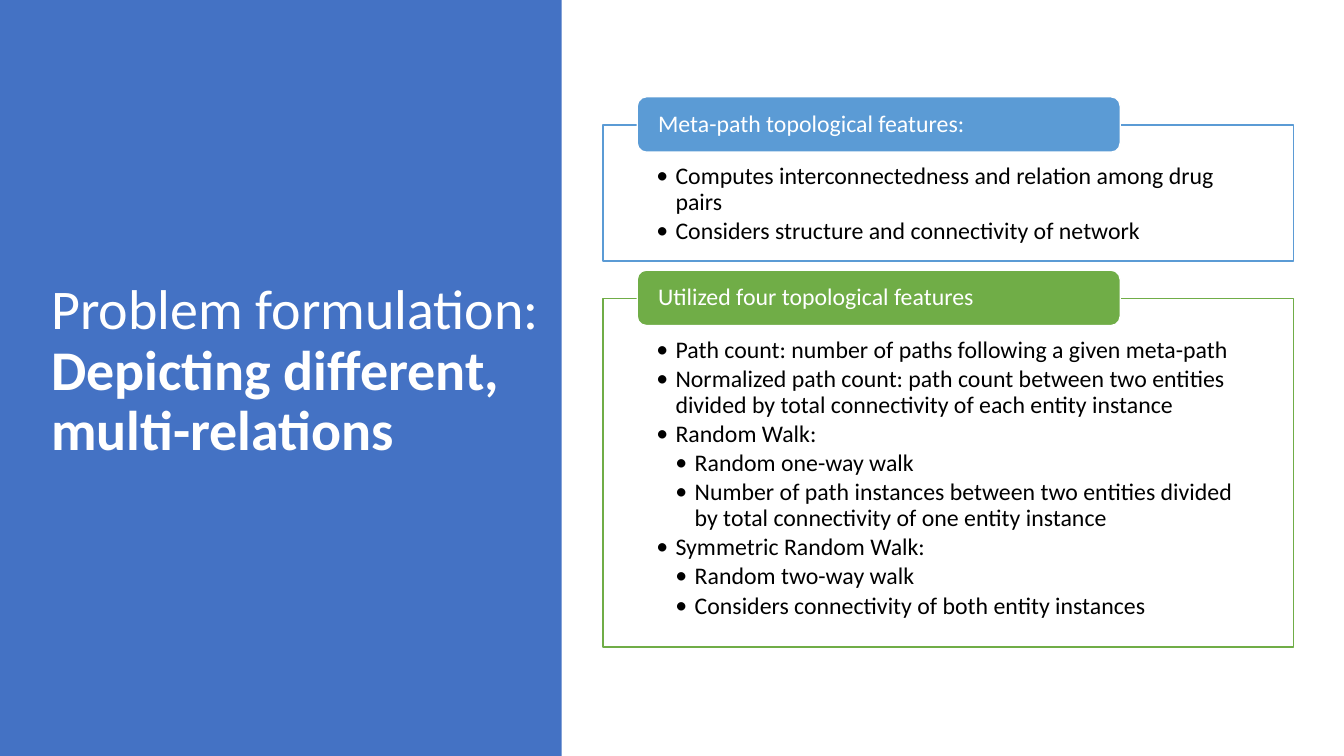
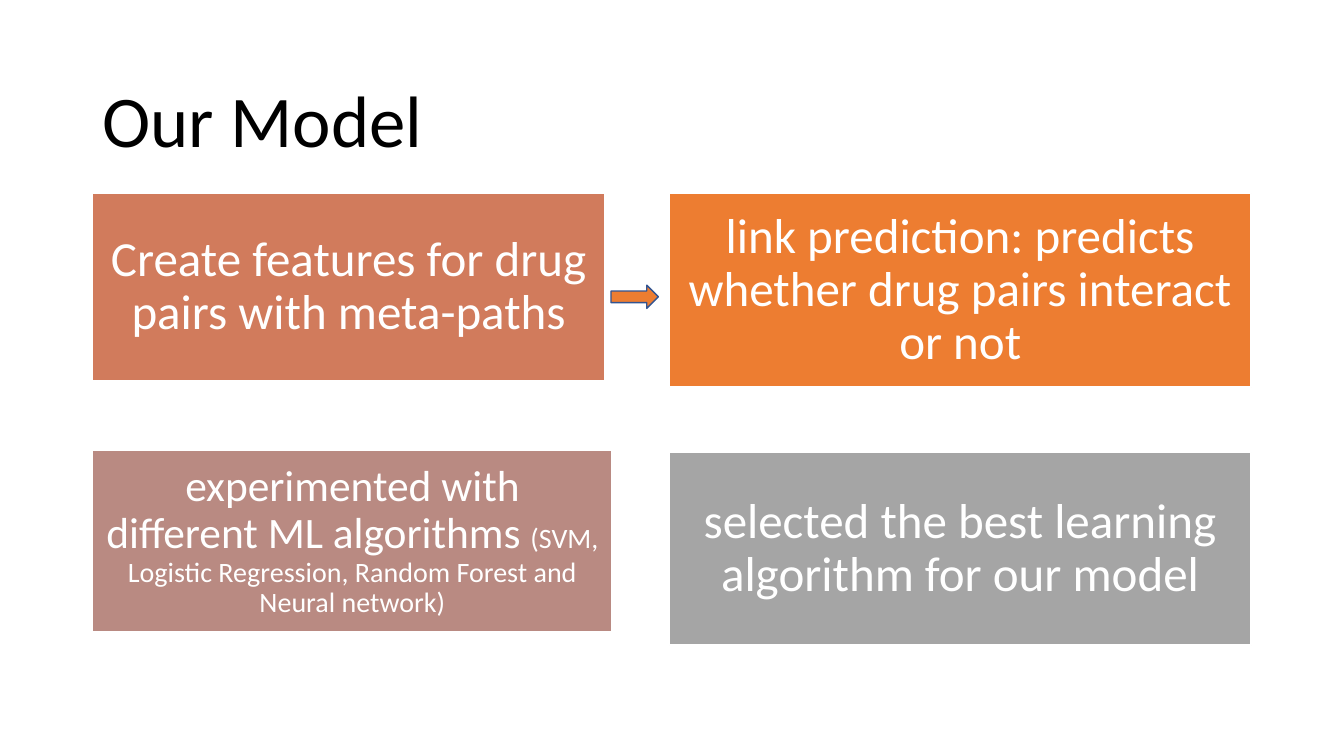
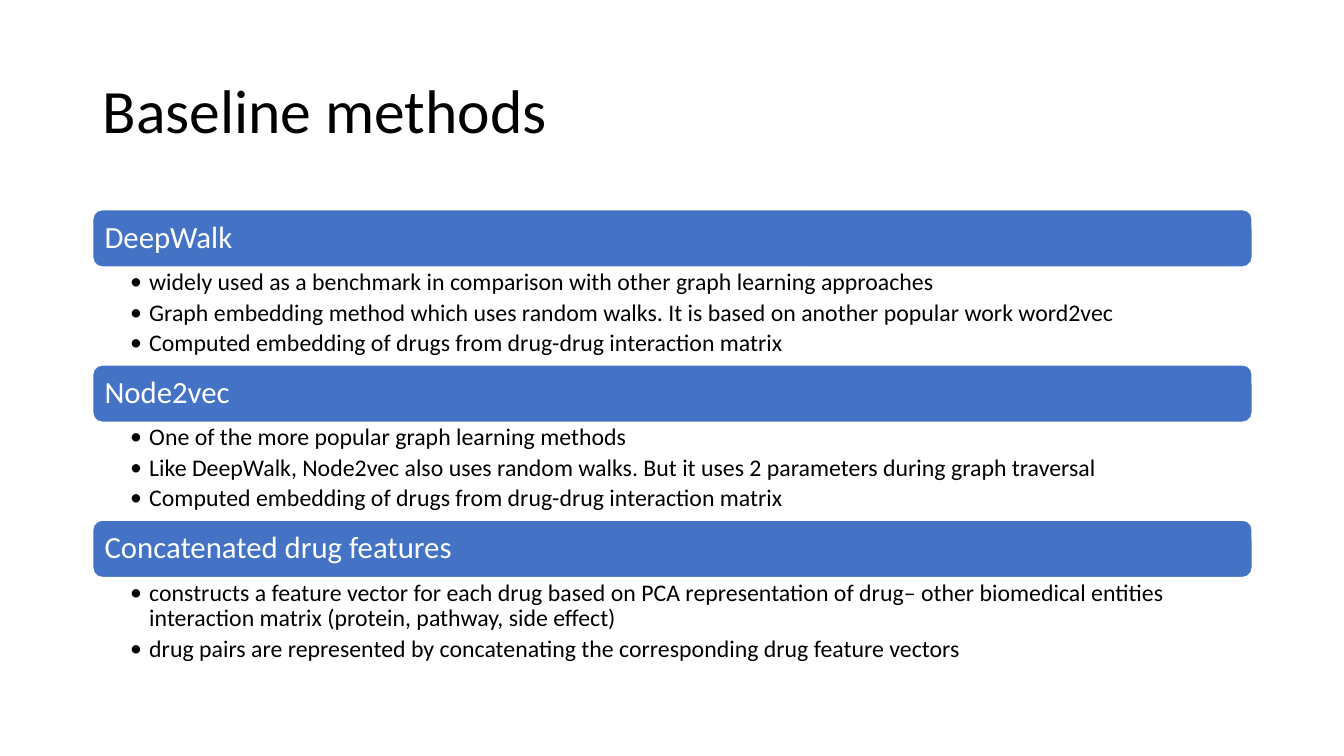
from dataclasses import dataclass

from lxml import etree
from pptx import Presentation
from pptx.dml.color import RGBColor
from pptx.enum.shapes import MSO_SHAPE
from pptx.enum.text import MSO_ANCHOR, PP_ALIGN
from pptx.oxml.ns import qn
from pptx.util import Inches, Pt

RECT, ROUNDED, ARROW = MSO_SHAPE.RECTANGLE, MSO_SHAPE.ROUNDED_RECTANGLE, MSO_SHAPE.RIGHT_ARROW
TOP, MIDDLE = MSO_ANCHOR.TOP, MSO_ANCHOR.MIDDLE
LEFT, CENTER = PP_ALIGN.LEFT, PP_ALIGN.CENTER

WHITE = RGBColor(0xFF, 0xFF, 0xFF)
BLACK = RGBColor(0x00, 0x00, 0x00)
BLUE = RGBColor(0x44, 0x72, 0xC4)
DARK_BLUE = RGBColor(0x32, 0x54, 0x91)
LIGHT_BLUE = RGBColor(0x5B, 0x9B, 0xD5)
GREEN = RGBColor(0x70, 0xAD, 0x47)
ORANGE = RGBColor(0xED, 0x7D, 0x31)
TERRACOTTA = RGBColor(0xD1, 0x7B, 0x5C)
ROSE = RGBColor(0xB9, 0x8A, 0x82)
GRAY = RGBColor(0xA5, 0xA5, 0xA5)

FONT = "Calibri"
BODY_SIZE = 17
BULLET_STEP = 0.19
TITLE_INSETS = (0.1, 0.05, 0.1, 0.05)
MARGIN, CONTENT_WIDTH = 0.92, 11.5


@dataclass(frozen=True)
class Box:
    left: float
    top: float
    width: float
    height: float

    def emu(self):
        return [Inches(v) for v in (self.left, self.top, self.width, self.height)]


@dataclass(frozen=True)
class Run:
    text: str
    size: float
    color: RGBColor = WHITE
    bold: bool = False


@dataclass(frozen=True)
class Bullet:
    text: str
    level: int = 1


@dataclass(frozen=True)
class Panel:
    heading: str
    color: RGBColor
    top: float
    height: float
    bullets: list[Bullet]


@dataclass(frozen=True)
class Step:
    box: Box
    color: RGBColor
    inset: float
    runs: list[Run]


@dataclass(frozen=True)
class Method:
    name: str
    body_height: float
    bullets: list[Bullet]


# Shared drawing helpers
def add_shape(slide, kind, box: Box, fill: RGBColor, line: RGBColor | None = None):
    sp = slide.shapes.add_shape(kind, *box.emu())
    sp.shadow.inherit = False
    sp.fill.solid()
    sp.fill.fore_color.rgb = fill
    if line is None:
        sp.line.fill.background()
    else:
        sp.line.color.rgb = line
        sp.line.width = Pt(1)
    return sp


def set_frame(sp, insets: tuple[float, ...], anchor):
    tf = sp.text_frame
    tf.word_wrap = True
    tf.vertical_anchor = anchor
    tf.margin_left, tf.margin_top, tf.margin_right, tf.margin_bottom = map(Inches, insets)
    return tf


def add_runs(p, runs: list[Run], align=LEFT) -> None:
    p.alignment = align
    p.line_spacing = 0.9
    for run in runs:
        r = p.add_run()
        r.text = run.text
        r.font.name = FONT
        r.font.size = Pt(run.size)
        r.font.bold = run.bold
        r.font.color.rgb = run.color


def write(sp, runs: list[Run], insets: tuple[float, ...], align=LEFT) -> None:
    add_runs(set_frame(sp, insets, MIDDLE).paragraphs[0], runs, align)


def write_bullets(sp, bullets: list[Bullet], insets: tuple[float, ...], gap: float) -> None:
    tf = set_frame(sp, insets, TOP)
    for i, bullet in enumerate(bullets):
        p = tf.add_paragraph() if i else tf.paragraphs[0]
        add_runs(p, [Run(bullet.text, BODY_SIZE, BLACK)])
        p.level = bullet.level
        p.space_after = Pt(gap)
        pPr = p._p.get_or_add_pPr()
        pPr.set("marL", str(Inches(BULLET_STEP * bullet.level)))
        pPr.set("indent", str(-Inches(BULLET_STEP)))
        etree.SubElement(pPr, qn("a:buFont")).set("typeface", FONT)
        etree.SubElement(pPr, qn("a:buChar")).set("char", "•")


def add_title(slide, box: Box, runs: list[Run]) -> None:
    write(slide.shapes.add_textbox(*box.emu()), runs, TITLE_INSETS)


# Slide 1: side title and two headed panels
PANELS = [
    Panel("Meta-path topological features:", LIGHT_BLUE, 1.24, 1.35, [
        Bullet("Computes interconnectedness and relation among drug pairs"),
        Bullet("Considers structure and connectivity of network"),
    ]),
    Panel("Utilized four topological features", GREEN, 2.96, 3.46, [
        Bullet("Path count: number of paths following a given meta-path"),
        Bullet("Normalized path count: path count between two entities divided by "
               "total connectivity of each entity instance"),
        Bullet("Random Walk:"),
        Bullet("Random one-way walk", 2),
        Bullet("Number of path instances between two entities divided by total "
               "connectivity of one entity instance", 2),
        Bullet("Symmetric Random Walk:"),
        Bullet("Random two-way walk", 2),
        Bullet("Considers connectivity of both entity instances", 2),
    ]),
]


def build_formulation(slide) -> None:
    add_shape(slide, RECT, Box(0, 0, 5.57, 7.5), BLUE)
    add_title(slide, Box(0.41, 0.68, 5.18, 6.02), [
        Run("Problem formulation: ", 40),
        Run("Depicting different, multi-relations", 40, bold=True),
    ])
    for panel in PANELS:
        frame = add_shape(slide, RECT, Box(5.98, panel.top, 6.85, panel.height),
                          WHITE, panel.color)
        write_bullets(frame, panel.bullets, (0.53, 0.39, 0.53, 0.13), 2.5)
        tab = add_shape(slide, ROUNDED, Box(6.32, panel.top - 0.28, 4.79, 0.55),
                        panel.color, WHITE)
        write(tab, [Run(panel.heading, BODY_SIZE)], (0.18, 0, 0.18, 0))


# Slide 2: four steps of the model
RIGHT_COLUMN, RIGHT_WIDTH = 6.64, 5.77
STEPS = [
    Step(Box(RIGHT_COLUMN, 1.92, RIGHT_WIDTH, 1.92), ORANGE, 0.15,
         [Run("link prediction: predicts whether drug pairs interact or not", 35)]),
    Step(Box(MARGIN, 1.92, 5.08, 1.86), TERRACOTTA, 0.15,
         [Run("Create features for drug pairs with meta-paths", 35)]),
    Step(Box(MARGIN, 4.47, 5.15, 1.8), ROSE, 0.13,
         [Run("experimented with different ML algorithms ", 31),
          Run("(SVM, Logistic Regression, Random Forest and Neural network)", 20)]),
    Step(Box(RIGHT_COLUMN, 4.49, RIGHT_WIDTH, 1.91), GRAY, 0.15,
         [Run("selected the best learning algorithm for our model", 35)]),
]


def build_model(slide) -> None:
    add_title(slide, Box(MARGIN, 0.61, CONTENT_WIDTH, 1.24), [Run("Our Model", 52, BLACK)])
    for step in STEPS:
        sp = add_shape(slide, RECT, step.box, step.color, WHITE)
        write(sp, step.runs, (step.inset,) * 4, CENTER)
    add_shape(slide, ARROW, Box(6.06, 2.83, 0.47, 0.23), ORANGE, DARK_BLUE)


# Slide 3: baseline methods, stacked
BAR_HEIGHT = 0.57
EMBEDDING = Bullet("Computed embedding of drugs from drug-drug interaction matrix")
METHODS = [
    Method("DeepWalk", 0.97, [
        Bullet("widely used as a benchmark in comparison with other graph learning approaches"),
        Bullet("Graph embedding method which uses random walks. It is based on another "
               "popular work word2vec"),
        EMBEDDING,
    ]),
    Method("Node2vec", 0.97, [
        Bullet("One of the more popular graph learning methods"),
        Bullet("Like DeepWalk, Node2vec also uses random walks. But it uses 2 parameters "
               "during graph traversal"),
        EMBEDDING,
    ]),
    Method("Concatenated drug features", 0.92, [
        Bullet("constructs a feature vector for each drug based on PCA representation of "
               "drug– other biomedical entities interaction matrix (protein, pathway, "
               "side effect)"),
        Bullet("drug pairs are represented by concatenating the corresponding drug "
               "feature vectors"),
    ]),
]


def build_baselines(slide) -> None:
    add_title(slide, Box(MARGIN, 0.4, CONTENT_WIDTH, 1.45),
              [Run("Baseline methods", 44, BLACK)])
    top = 2.08
    for method in METHODS:
        bar = add_shape(slide, ROUNDED, Box(MARGIN, top, CONTENT_WIDTH, BAR_HEIGHT), BLUE, WHITE)
        write(bar, [Run(method.name, 22)], (0.09,) * 4)
        top += BAR_HEIGHT
        body = Box(MARGIN, top, CONTENT_WIDTH, method.body_height)
        write_bullets(slide.shapes.add_textbox(*body.emu()), method.bullets,
                      (0.37, 0.03, 0.17, 0.03), 3.4)
        top += method.body_height


def main() -> None:
    prs = Presentation()
    prs.slide_width, prs.slide_height = Inches(13.33), Inches(7.5)
    blank = prs.slide_layouts[6]
    for build in (build_formulation, build_model, build_baselines):
        build(prs.slides.add_slide(blank))
    prs.save("out.pptx")


if __name__ == "__main__":
    main()
